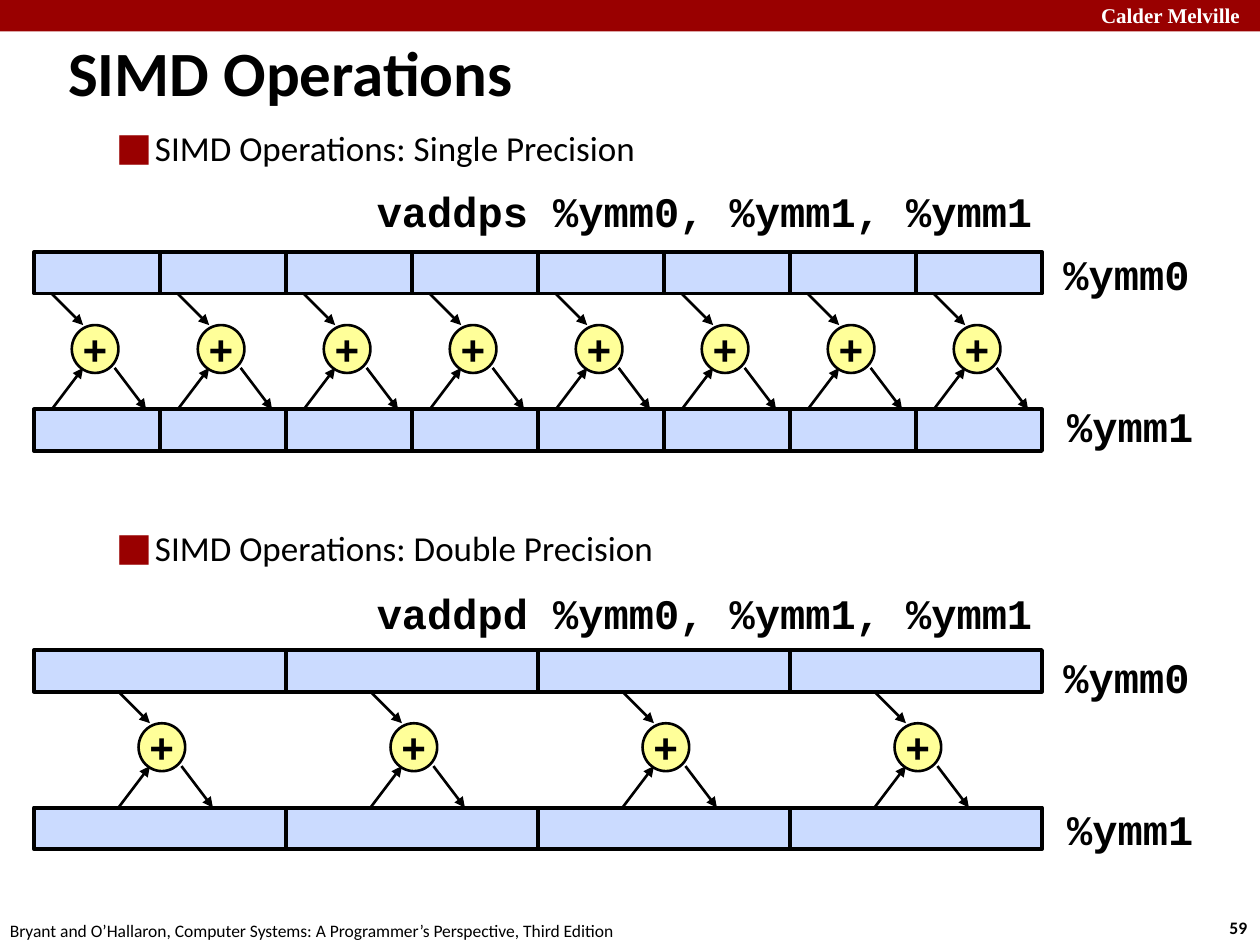
"""Build the slide on single and double precision SIMD operations."""
from dataclasses import dataclass

from lxml import etree
from pptx import Presentation
from pptx.dml.color import RGBColor
from pptx.enum.shapes import MSO_CONNECTOR, MSO_SHAPE
from pptx.enum.text import MSO_ANCHOR, MSO_AUTO_SIZE, PP_ALIGN
from pptx.oxml.ns import qn
from pptx.util import Inches, Pt

RECTANGLE, ELLIPSE = MSO_SHAPE.RECTANGLE, MSO_SHAPE.OVAL
STRAIGHT = MSO_CONNECTOR.STRAIGHT
LEFT, CENTER = PP_ALIGN.LEFT, PP_ALIGN.CENTER
MIDDLE, TOP = MSO_ANCHOR.MIDDLE, MSO_ANCHOR.TOP
NO_AUTOFIT = MSO_AUTO_SIZE.NONE

COLORS = {
    "ink": "000000",
    "paper": "FFFFFF",
    "accent": "990000",
    "register": "CBDBFF",
    "operator": "FFFF99",
}
CODE = {"font": "Courier New", "size": 24, "bold": True}
REGISTER_LEFT, REGISTER_WIDTH, REGISTER_HEIGHT = 0.27, 8, 0.33
REGISTER_STEP = 1.25
OPERATOR_TOP, OPERATOR_BOTTOM = 0.58, 0.92


@dataclass(frozen=True)
class Operation:
    """A vector instruction with its lane count and position."""
    instruction: str
    lanes: int
    top: float
    instruction_top: float
    label_top: float
    lead: float


OPERATIONS = [
    Operation("vaddps %ymm0, %ymm1, %ymm1", 8, 2, 1.42, 1.92, 0.14),
    Operation("vaddpd %ymm0, %ymm1, %ymm1", 4, 5.16, 4.61, 5.12, 0.67),
]


def rgb(name: str) -> RGBColor:
    """Look up a colour by its role."""
    return RGBColor.from_string(COLORS[name])


def write(paragraph, text: str, *, font: str = "Calibri", size: float = 10,
          color: str = "ink", bold: bool = False, align=LEFT) -> None:
    """Write one formatted run into a paragraph."""
    paragraph.alignment = align
    run = paragraph.add_run()
    run.text = text
    run.font.name = font
    run.font.size = Pt(size)
    run.font.bold = bold
    run.font.color.rgb = rgb(color)


def set_frame(frame, inset: float, anchor) -> None:
    """Set up an unwrapped text frame with equal insets."""
    frame.word_wrap = False
    frame.vertical_anchor = anchor
    frame.margin_left = frame.margin_right = Inches(inset)
    frame.margin_top = frame.margin_bottom = Inches(0.05)


def add_label(slide, text: str, left: float, top: float, width: float,
              height: float, inset: float = 0.05, **style) -> None:
    """Add a one-line text box."""
    label = slide.shapes.add_textbox(
        Inches(left), Inches(top), Inches(width), Inches(height))
    set_frame(label.text_frame, inset, TOP)
    write(label.text_frame.paragraphs[0], text, **style)


def add_block(slide, outline, left: float, top: float, width: float,
              height: float, fill: str, line_width: float = 0):
    """Add a filled shape, outlined when a line width is given."""
    block = slide.shapes.add_shape(
        outline, Inches(left), Inches(top), Inches(width), Inches(height))
    block.shadow.inherit = False
    block.fill.solid()
    block.fill.fore_color.rgb = rgb(fill)
    if line_width:
        block.line.color.rgb = rgb("ink")
        block.line.width = Pt(line_width)
    else:
        block.line.fill.background()
    return block


def add_arrow(slide, x1: float, y1: float, x2: float, y2: float) -> None:
    """Add an arrow pointing at its second end."""
    arrow = slide.shapes.add_connector(
        STRAIGHT, Inches(x1), Inches(y1), Inches(x2), Inches(y2))
    arrow.line.color.rgb = rgb("ink")
    arrow.line.width = Pt(1.5)
    etree.SubElement(arrow.line._get_or_add_ln(), qn("a:tailEnd"), type="triangle")
    etree.SubElement(arrow._element.spPr, qn("a:effectLst"))


def add_register(slide, top: float, lanes: int) -> None:
    """Add a register split into equal lanes."""
    width = REGISTER_WIDTH / lanes
    for lane in range(lanes):
        add_block(slide, RECTANGLE, REGISTER_LEFT + lane * width, top,
                  width, REGISTER_HEIGHT, "register", 2.25)


def add_adder(slide, left: float, top: float) -> None:
    """Add the plus operator of one lane with its three arrows."""
    adder = add_block(slide, ELLIPSE, left + 0.16, top + OPERATOR_TOP,
                      0.37, 0.38, "operator", 1.5)
    set_frame(adder.text_frame, 0.05, MIDDLE)
    write(adder.text_frame.paragraphs[0], "+", align=CENTER, **CODE)
    for x1, y1, x2, y2 in (
        (0, REGISTER_HEIGHT, 0.25, OPERATOR_TOP),
        (0, REGISTER_STEP, 0.25, OPERATOR_BOTTOM),
        (0.5, OPERATOR_BOTTOM, 0.75, REGISTER_STEP),
    ):
        add_arrow(slide, left + x1, top + y1, left + x2, top + y2)


def add_operation(slide, operation: Operation) -> None:
    """Add an instruction with both registers and its adders."""
    add_label(slide, operation.instruction, 2.94, operation.instruction_top,
              5.35, 0.5, **CODE)
    add_label(slide, "%ymm0", 8.39, operation.label_top, 1.11, 0.5, **CODE)
    add_label(slide, "%ymm1", 8.42, operation.label_top + 1.21, 1.11, 0.5, **CODE)
    for top in (operation.top, operation.top + REGISTER_STEP):
        add_register(slide, top, operation.lanes)
    for lane in range(operation.lanes):
        left = REGISTER_LEFT + lane * REGISTER_WIDTH / operation.lanes
        add_adder(slide, left + operation.lead, operation.top)


def place(placeholder, left: float, top: float, width: float, height: float):
    """Move a placeholder and return its text frame."""
    placeholder.left, placeholder.top = Inches(left), Inches(top)
    placeholder.width, placeholder.height = Inches(width), Inches(height)
    placeholder.text_frame.auto_size = NO_AUTOFIT
    return placeholder.text_frame


def add_bullet(paragraph, text: str, space_before: float) -> None:
    """Write a second-level item with a square bullet."""
    paragraph.level = 1
    paragraph.space_before = Pt(space_before)
    write(paragraph, text, size=20)
    properties = paragraph._p.get_or_add_pPr()
    properties.set("marL", str(Inches(0.81)))
    properties.set("indent", str(Inches(-0.31)))
    bullet_color = etree.SubElement(properties, qn("a:buClr"))
    etree.SubElement(bullet_color, qn("a:srgbClr"), val=COLORS["accent"])
    etree.SubElement(properties, qn("a:buSzPct"), val="110000")
    etree.SubElement(properties, qn("a:buFont"), typeface="Calibri")
    etree.SubElement(properties, qn("a:buChar"), char="■")


def main() -> None:
    """Build and save the slide."""
    presentation = Presentation()
    presentation.slide_width, presentation.slide_height = Inches(10), Inches(7.5)
    slide = presentation.slides.add_slide(presentation.slide_layouts[1])

    add_block(slide, RECTANGLE, 0, 0, 10, 0.25, "accent")
    add_label(slide, "Calder Melville", 8.64, -0.03, 1.43, 0.3, 0.1,
              font="Times New Roman", size=12, color="paper", bold=True)
    add_label(slide, "59", 9.66, 7.23, 0.37, 0.27, 0.1, bold=True)
    add_label(slide, "Bryant and O’Hallaron, Computer Systems: "
              "A Programmer’s Perspective, Third Edition",
              -0.02, 7.25, 5.08, 0.27, 0.1)

    title = place(slide.shapes.title, 0.44, 0.14, 9.53, 0.85)
    title.vertical_anchor = MIDDLE
    write(title.paragraphs[0], "SIMD Operations", size=36, bold=True)

    body = place(slide.placeholders[1], 0.32, 0.95, 9.09, 5.88)
    add_bullet(body.paragraphs[0], "SIMD Operations: Single Precision", 0)
    add_bullet(body.add_paragraph(), "SIMD Operations: Double Precision", 205)

    for operation in OPERATIONS:
        add_operation(slide, operation)
    presentation.save("out.pptx")


if __name__ == "__main__":
    main()
